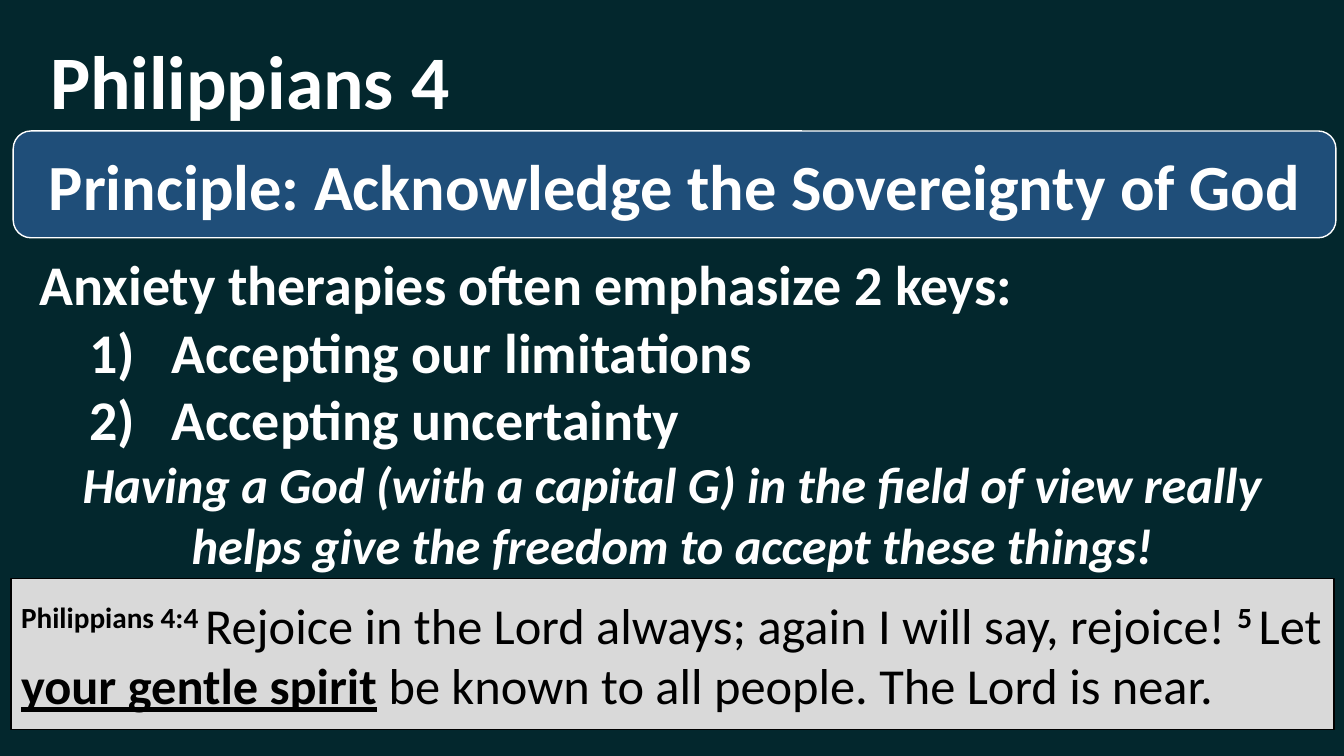
from dataclasses import dataclass

from lxml.etree import SubElement
from pptx import Presentation
from pptx.dml.color import RGBColor
from pptx.enum.shapes import MSO_SHAPE
from pptx.enum.text import MSO_ANCHOR, MSO_AUTO_SIZE, PP_ALIGN
from pptx.oxml.ns import qn
from pptx.util import Inches, Pt


@dataclass(frozen=True)
class Theme:
    font: str = "Calibri"
    background: str = "03272D"
    light: str = "FFFFFF"
    dark: str = "000000"
    banner: str = "1F4E79"
    panel: str = "D9D9D9"
    title_size: int = 54
    banner_size: int = 46
    list_size: int = 40
    body_size: int = 36


class SlideBuilder:
    """Holds the theme and the page; areas are percent shares of the slide."""

    def __init__(self, deck, theme):
        self.deck, self.theme = deck, theme
        self.page = deck.slides.add_slide(deck.slide_layouts[6])
        fill = self.page.background.fill
        fill.solid()
        fill.fore_color.rgb = RGBColor.from_string(theme.background)

    def place(self, left, top, width, height):
        across, down = self.deck.slide_width, self.deck.slide_height
        shares = ((left, across), (top, down), (width, across), (height, down))
        return [round(share * full / 100) for share, full in shares]

    def style(self, para, size, color, align=PP_ALIGN.LEFT, bold=None, italic=None):
        para.alignment = align
        font = para.font
        font.name, font.size = self.theme.font, Pt(size)
        font.bold, font.italic = bold, italic
        font.color.rgb = RGBColor.from_string(color)

    def text(self, area, lines, size, align=PP_ALIGN.LEFT, italic=None):
        """Add a bold text box; lines after the first are numbered."""
        box = self.page.shapes.add_textbox(*self.place(*area))
        frame = box.text_frame
        frame.word_wrap = True
        frame.auto_size = MSO_AUTO_SIZE.SHAPE_TO_FIT_TEXT
        frame.text = "\n".join(lines)
        for index, para in enumerate(frame.paragraphs):
            if index:
                self.number(para)
            self.style(para, size, self.theme.light, align, True, italic)

    def number(self, para):
        para.level = 1
        properties = para._p.get_or_add_pPr()
        properties.set("marL", str(Inches(1.31)))
        properties.set("indent", str(Inches(-0.81)))
        SubElement(properties, qn("a:buFont"), typeface="+mj-lt")
        SubElement(properties, qn("a:buAutoNum"), type="arabicParenR")

    def panel(self, area, kind, fill, line):
        """Add a filled, outlined shape and return its paragraph."""
        shape = self.page.shapes.add_shape(kind, *self.place(*area))
        shape.shadow.inherit = False
        shape.fill.solid()
        shape.fill.fore_color.rgb = RGBColor.from_string(fill)
        shape.line.color.rgb = RGBColor.from_string(line)
        shape.line.width = Pt(1)
        frame = shape.text_frame
        frame.word_wrap = True
        frame.vertical_anchor = MSO_ANCHOR.MIDDLE
        return frame.paragraphs[0]

    def banner(self, area, words):
        theme = self.theme
        para = self.panel(area, MSO_SHAPE.ROUNDED_RECTANGLE, theme.banner, theme.light)
        para.text = words
        self.style(para, theme.banner_size, theme.light, PP_ALIGN.CENTER, True)

    def verse(self, area, parts):
        """Add a scripture panel from (words, role) parts."""
        theme = self.theme
        para = self.panel(area, MSO_SHAPE.RECTANGLE, theme.panel, theme.dark)
        self.style(para, theme.body_size, theme.dark)
        for words, role in parts:
            span = para.add_run()
            span.text = words
            span.font.bold = role != "plain"
            if role == "stress":
                span.font.underline = True
            elif role == "number":
                span._r.get_or_add_rPr().set("baseline", "30000")


def main():
    deck = Presentation()
    deck.slide_width, deck.slide_height = Inches(13.33), Inches(7.5)
    theme = Theme()
    slide = SlideBuilder(deck, theme)

    # Title
    slide.text((0, 3.87, 37.2, 13.47), ["Philippians 4"], theme.title_size,
               PP_ALIGN.CENTER)

    # Scripture
    slide.verse((0.83, 76.53, 98.42, 20), [
        ("Philippians 4:4 ", "number"),
        ("Rejoice in the Lord always; again I will say, rejoice! ", "plain"),
        ("5 ", "number"),
        ("Let ", "plain"),
        ("your gentle spirit", "stress"),
        (" be known to all people. The Lord is near.", "plain"),
    ])

    # Principle
    slide.banner((0.98, 17.33, 98.42, 14.13),
                 "Principle: Acknowledge the Sovereignty of God")

    # Two keys and the conclusion
    slide.text((2.18, 32.4, 97.07, 28.27), [
        "Anxiety therapies often emphasize 2 keys:",
        "Accepting our limitations",
        "Accepting uncertainty",
    ], theme.list_size)
    slide.text((1.5, 59.33, 97.07, 17.47), [
        "Having a God (with a capital G) in the field of view really "
        "helps give the freedom to accept these things!",
    ], theme.body_size, PP_ALIGN.CENTER, italic=True)

    deck.save("out.pptx")


if __name__ == "__main__":
    main()
